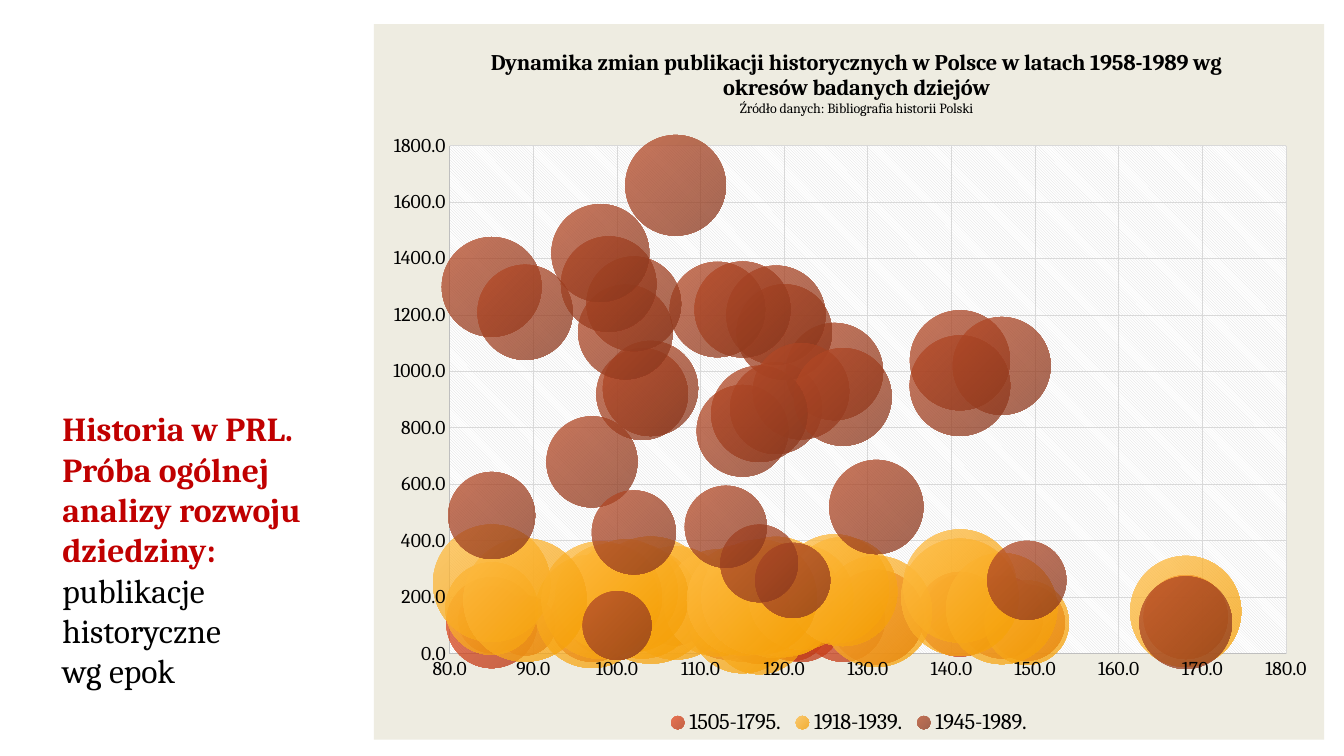
import pptx
import pptx.chart.data
import pptx.dml.color
import pptx.enum.chart
import pptx.oxml
import pptx.oxml.ns
import pptx.util

Cm, Pt = pptx.util.Cm, pptx.util.Pt
FONT = "Cambria"
COLORS = {"head": "C00000", "text": "000000", "back": "EEECE1",
          "axis": "BFBFBF", "grid": "D9D9D9", "plot": "FFFFFF"}

HEAD = "Historia w PRL. Próba ogólnej analizy rozwoju dziedziny: "
TOPIC = ["publikacje historyczne", "wg epok"]
TITLE = [
    ("Dynamika zmian publikacji historycznych w Polsce w latach 1958-1989 "
     "wg okresów badanych dziejów", 16, True),
    ("Źródło danych: Bibliografia historii Polski", 10, False),
]
# Horizontal values, shared by all three periods
INDEX = [100, 121, 149, 117, 168, 131, 115, 97, 113, 85, 102, 126, 119, 141, 104, 120,
         107, 119, 103, 112, 85, 101, 102, 99, 98, 115, 89, 146, 122, 141, 127, 117]
# Name, gradient ends, vertical values, bubble sizes
PERIODS = [
    ("1505-1795.", ("E84C22", "B53513"),
     [100, 100, 110, 90, 130, 130, 120, 120, 120, 110, 150, 150, 140, 160, 150, 130,
      130, 170, 130, 130, 120, 120, 110, 100, 110, 120, 100, 130, 120, 140, 120, 110],
     [100, 105, 122, 104, 149, 188, 147, 148, 131, 174, 79, 86, 84, 96, 62, 65,
      68, 66, 75, 81, 93, 77, 71, 80, 78, 74, 76, 144, 149, 151, 148, 143]),
    ("1918-1939.", ("FFBD47", "F49D00"),
     [100, 130, 110, 100, 150, 150, 120, 150, 140, 160, 190, 230, 170, 240, 190, 190,
      180, 210, 180, 180, 250, 220, 200, 200, 190, 190, 190, 160, 200, 200, 220, 200],
     [100, 120, 150, 200, 260, 260, 240, 270, 130, 180, 190, 250, 230, 270, 340, 270,
      270, 280, 260, 240, 290, 230, 250, 240, 290, 260, 320, 260, 230, 290, 250, 280]),
    ("1945-1989.", ("B64926", "88371D"),
     [100, 260, 260, 320, 110, 520, 790, 680, 450, 490, 430, 1000, 870, 1040, 940, 1140,
      1660, 1200, 920, 1220, 1300, 1140, 1240, 1310, 1420, 1220, 1210, 1020, 930, 950,
      910, 850],
     [100, 119, 132, 127, 181, 187, 177, 175, 142, 160, 149, 199, 177, 211, 191, 192,
      214, 207, 177, 192, 210, 189, 189, 192, 202, 194, 191, 202, 195, 213, 201, 195]),
]


def color(key):
    return pptx.dml.color.RGBColor.from_string(COLORS[key])


def style(font, size, bold=False):
    font.name, font.size, font.bold = FONT, Pt(size), bold
    font.color.rgb = color("text")


def make(tag, body):
    """Make a chart element from its tag and inner XML."""
    names = pptx.oxml.ns.nsdecls("c", "a")
    return pptx.oxml.parse_xml(f"<c:{tag} {names}>{body}</c:{tag}>")


def place(parent, spots, inner=False):
    """Give a chart part a fixed place, in fractions of the chart."""
    body = '<c:layoutTarget val="inner"/>' if inner else ""
    body += "".join(f'<c:{key}Mode val="edge"/>' for key in "xy")
    body += "".join(f'<c:{key} val="{val}"/>' for key, val in spots.items())
    layout = make("layout", f"<c:manualLayout>{body}</c:manualLayout>")
    old = parent.find(pptx.oxml.ns.qn("c:layout"))
    if old is None:
        parent.insert(0, layout)
    else:
        parent.replace(old, layout)


def solid(key):
    return f'<a:srgbClr val="{COLORS[key]}"/>'


def add_text(slide):
    frame = slide.shapes.add_textbox(Cm(1.32), Cm(10.16), Cm(7.67), Cm(7.44)).text_frame
    frame.word_wrap = True
    para = frame.paragraphs[0]
    para.font.name, para.font.size = FONT, Pt(24)
    runs = [(HEAD, "head", True)] + [(line, "text", False) for line in TOPIC]
    for num, (words, key, bold) in enumerate(runs):
        if num == 2:
            para.add_line_break()
        run = para.add_run()
        run.text = words
        run.font.bold = bold
        run.font.color.rgb = color(key)


def add_title(chart):
    chart.has_title = True
    frame = chart.chart_title.text_frame
    for num, (words, size, bold) in enumerate(TITLE):
        para = frame.add_paragraph() if num else frame.paragraphs[0]
        para.text = words
        style(para.font, size, bold)
    place(chart.element.chart.find(pptx.oxml.ns.qn("c:title")), {"x": 0.12, "y": 0.03})


def add_axis(axis, low, high, step):
    axis.minimum_scale, axis.maximum_scale, axis.major_unit = low, high, step
    axis.has_major_gridlines = True
    axis.major_tick_mark = axis.minor_tick_mark = pptx.enum.chart.XL_TICK_MARK.NONE
    for part, key in ((axis, "axis"), (axis.major_gridlines, "grid")):
        part.format.line.color.rgb = color(key)
        part.format.line.width = Pt(0.75)
    axis.tick_labels.number_format = "0.0"
    axis.tick_labels.number_format_is_linked = False
    style(axis.tick_labels.font, 14)


def add_chart(slide):
    data = pptx.chart.data.BubbleChartData()
    for name, ends, counts, sizes in PERIODS:
        series = data.add_series(name)
        for point in zip(INDEX, counts, sizes):
            series.add_data_point(*point)
    kind = pptx.enum.chart.XL_CHART_TYPE.BUBBLE
    chart = slide.shapes.add_chart(kind, Cm(9.42), Cm(0.61), Cm(23.95), Cm(18.03), data).chart
    style(chart.font, 10)
    add_title(chart)
    add_axis(chart.category_axis, 80, 180, 10)
    add_axis(chart.value_axis, 0, 1800, 200)
    chart.has_legend = True
    chart.legend.position = pptx.enum.chart.XL_LEGEND_POSITION.BOTTOM
    chart.legend.include_in_layout = False
    style(chart.legend.font, 16)

    for series, (name, ends, counts, sizes) in zip(chart.plots[0].series, PERIODS):
        fill = series.format.fill
        fill.gradient()
        fill.gradient_angle = 315
        for stop, shade in zip(fill.gradient_stops, ends):
            stop.color.rgb = pptx.dml.color.RGBColor.from_string(shade)
        series.format.line.fill.background()
    for stop in chart.element.iter(pptx.oxml.ns.qn("a:gs")):
        stop[0].append(pptx.oxml.parse_xml(
            f'<a:alpha {pptx.oxml.ns.nsdecls("a")} val="75000"/>'))

    area = chart.element.chart.plotArea
    place(area, {"x": 0.08, "y": 0.17, "w": 0.88, "h": 0.71}, inner=True)
    area.append(make("spPr", f'<a:pattFill prst="ltDnDiag"><a:fgClr>{solid("grid")}</a:fgClr>'
                     f'<a:bgClr>{solid("plot")}</a:bgClr></a:pattFill><a:ln><a:noFill/></a:ln>'))
    back = make("spPr", f'<a:solidFill>{solid("back")}</a:solidFill><a:ln><a:noFill/></a:ln>')
    chart.element.find(pptx.oxml.ns.qn("c:txPr")).addprevious(back)


def main():
    deck = pptx.Presentation()
    deck.slide_width, deck.slide_height = Cm(33.87), Cm(19.05)
    slide = deck.slides.add_slide(deck.slide_layouts[6])
    add_text(slide)
    add_chart(slide)
    deck.save("out.pptx")


if __name__ == "__main__":
    main()
